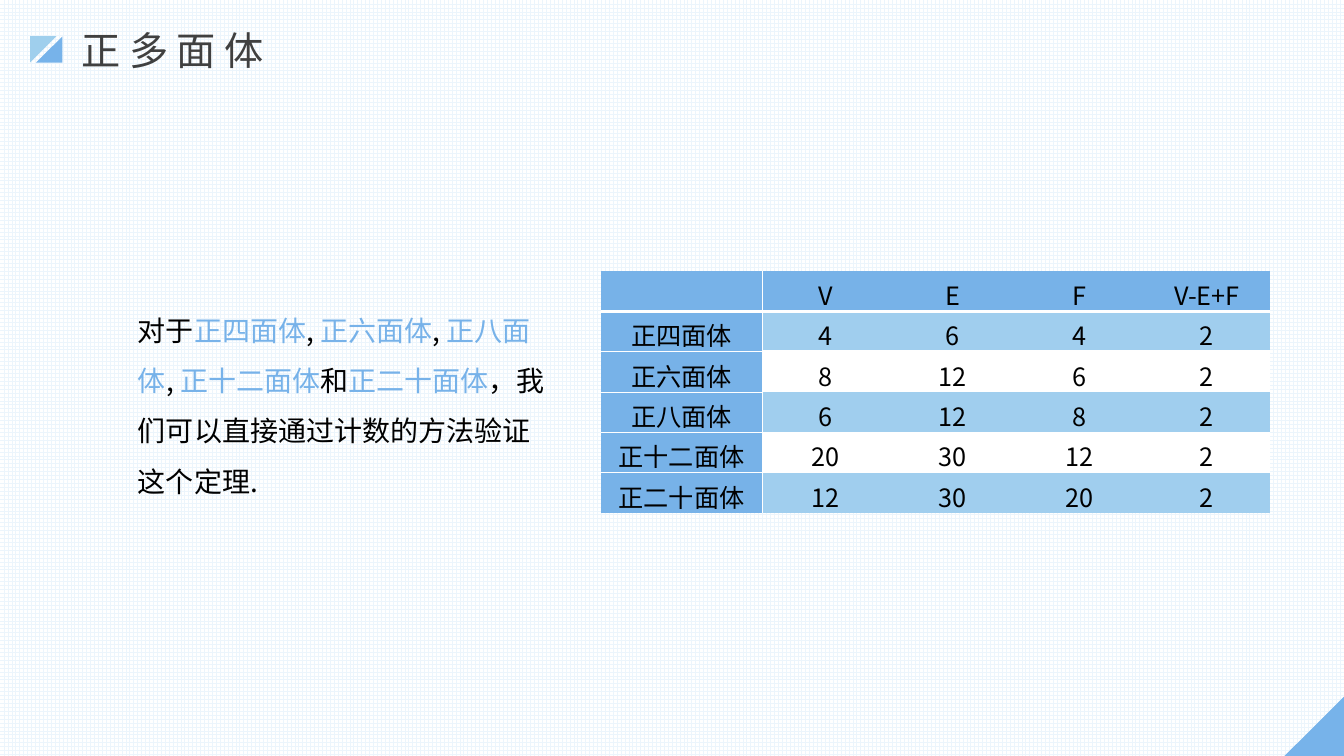
from pptx import Presentation
from pptx import util as u
from pptx.dml.color import RGBColor
from pptx.enum import dml, shapes, text
from pptx.oxml import parse_xml
from pptx.oxml.ns import nsdecls, qn

BLUE = RGBColor(0x77, 0xB3, 0xEA)
LIGHT_BLUE = RGBColor(0x9F, 0xCF, 0xED)
ACCENT = RGBColor(0x77, 0xB2, 0xE9)
HEADER = RGBColor(0x77, 0xB2, 0xE8)
BAND = RGBColor(0xA0, 0xCE, 0xEE)
GRID = RGBColor(0xEC, 0xF5, 0xFC)
WHITE = RGBColor(0xFF, 0xFF, 0xFF)
BLACK = RGBColor(0, 0, 0)
GREY = RGBColor(0x40, 0x40, 0x40)
CJK_FONT = "Noto Sans CJK SC"
TITLE_FONT = "Roboto"
NO_STYLE = "{2D5ABB26-0587-4C30-8999-92F81FD0307C}"

SOLIDS = [
    ("正四面体", 4, 6, 4),
    ("正六面体", 8, 12, 6),
    ("正八面体", 6, 12, 8),
    ("正十二面体", 20, 30, 12),
    ("正二十面体", 12, 30, 20),
]
BODY = [
    ("对于", BLACK), ("正四面体", ACCENT), (", ", BLACK),
    ("正六面体", ACCENT), (", ", BLACK), ("正八面体", ACCENT),
    (", ", BLACK), ("正十二面体", ACCENT), ("和", BLACK),
    ("正二十面体", ACCENT),
    ("，我们可以直接通过计数的方法验证这个定理.", BLACK),
]


def add_run(p, content, size, color, font=CJK_FONT):
    """Add one formatted run with Latin and East Asian fonts."""
    r = p.add_run()
    r.text = content
    r.font.size = u.Pt(size)
    r.font.name = font
    r.font.color.rgb = color
    r.font._element.get_or_add_ea().set("typeface", CJK_FONT) if hasattr(
        r.font._element, "get_or_add_ea") else r.font._element.find(
        qn("a:latin")).addnext(parse_xml(
            f'<a:ea {nsdecls("a")} typeface="{CJK_FONT}"/>'))
    return r


def add_triangle(s, left, top, size, rotation, color):
    """Add a rotated right triangle."""
    sp = s.shapes.add_shape(shapes.MSO_SHAPE.RIGHT_TRIANGLE, u.Inches(left),
                            u.Inches(top), u.Inches(size), u.Inches(size))
    sp.rotation = rotation
    sp.shadow.inherit = False
    sp.fill.solid()
    sp.fill.fore_color.rgb = color
    sp.line.fill.background()


def add_title(s, content):
    """Place and format the title placeholder."""
    sp = s.shapes.title
    sp.left, sp.top = u.Inches(0.71), u.Inches(0.21)
    sp.width, sp.height = u.Inches(5.42), u.Inches(0.57)
    tf = sp.text_frame
    tf.word_wrap = True
    tf.auto_size = text.MSO_AUTO_SIZE.NONE
    tf.vertical_anchor = text.MSO_ANCHOR.TOP
    p = tf.paragraphs[0]
    p.alignment = text.PP_ALIGN.LEFT
    r = add_run(p, content, 28, GREY, TITLE_FONT)
    r.font._element.set("spc", "600")


def add_body(s, runs):
    """Add the paragraph with highlighted names."""
    sp = s.shapes.add_textbox(u.Inches(1.27), u.Inches(2.89),
                              u.Inches(4.37), u.Inches(2.12))
    tf = sp.text_frame
    tf.word_wrap = True
    p = tf.paragraphs[0]
    p.line_spacing = 1.5
    for content, color in runs:
        add_run(p, content, 20, color)


def set_borders(cell, **widths):
    """Draw white cell borders, given as side=points."""
    tcPr = cell._tc.get_or_add_tcPr()
    sides = [side for side in "LRTB" if side in widths]
    for i, side in enumerate(sides):
        tcPr.insert(i, parse_xml(
            f'<a:ln{side} {nsdecls("a")} w="{u.Pt(widths[side])}">'
            f'<a:solidFill><a:srgbClr val="{WHITE}"/></a:solidFill>'
            f'</a:ln{side}>'))


def format_cell(cell, content, row, col, last_row):
    """Fill one table cell and apply its banding and borders."""
    cell.margin_top, cell.margin_bottom = u.Inches(0.05), 0
    cell.fill.solid()
    if row == 0 or col == 0:
        cell.fill.fore_color.rgb = HEADER
    else:
        cell.fill.fore_color.rgb = BAND if row % 2 else WHITE
    p = cell.text_frame.paragraphs[0]
    p.alignment = text.PP_ALIGN.CENTER
    p.font.size = u.Pt(18)
    if content != "":
        add_run(p, str(content), 18, BLACK)
    borders = {"R": 0.5} if col == 0 else {}
    if row == 0:
        borders["B"] = 2.25
    elif col == 0:
        borders["T"] = 2.25 if row == 1 else 0.5
        if row < last_row:
            borders["B"] = 0.5
    elif row == 1:
        borders["T"] = 2.25
    set_borders(cell, **borders)


def add_solids_table(s):
    """Add the table of vertices, edges, faces and their Euler sum."""
    rows = [("", "V", "E", "F", "V-E+F")]
    rows += [(name, v, e, f, v - e + f) for name, v, e, f in SOLIDS]
    frame = s.shapes.add_table(len(rows), 5, u.Inches(5.96), u.Inches(2.69),
                               u.Inches(6.64), u.Inches(2.4))
    table = frame.table
    table.first_row = table.horz_banding = False
    table._tbl.tblPr.find(qn("a:tableStyleId")).text = NO_STYLE
    for i, column in enumerate(table.columns):
        column.width = u.Inches(1.26 if i else 1.6)
    for i, values in enumerate(rows):
        table.rows[i].height = u.Inches(0.4)
        for j, value in enumerate(values):
            format_cell(table.cell(i, j), value, i, j, len(rows) - 1)


def main():
    """Build the slide on regular polyhedra."""
    prs = Presentation()
    prs.slide_width, prs.slide_height = u.Inches(13.33), u.Inches(7.5)
    s = prs.slides.add_slide(prs.slide_layouts[5])
    fill = s.background.fill
    fill.patterned()
    fill.pattern = dml.MSO_PATTERN.LARGE_GRID
    fill.fore_color.rgb, fill.back_color.rgb = GRID, WHITE
    add_triangle(s, 12.74, 6.9, 0.6, 270, BLUE)
    add_triangle(s, 0.36, 0.36, 0.26, 270, BLUE)
    add_triangle(s, 0.3, 0.36, 0.26, 90, LIGHT_BLUE)
    add_title(s, "正多面体")
    add_body(s, BODY)
    add_solids_table(s)
    prs.save("out.pptx")


if __name__ == "__main__":
    main()
